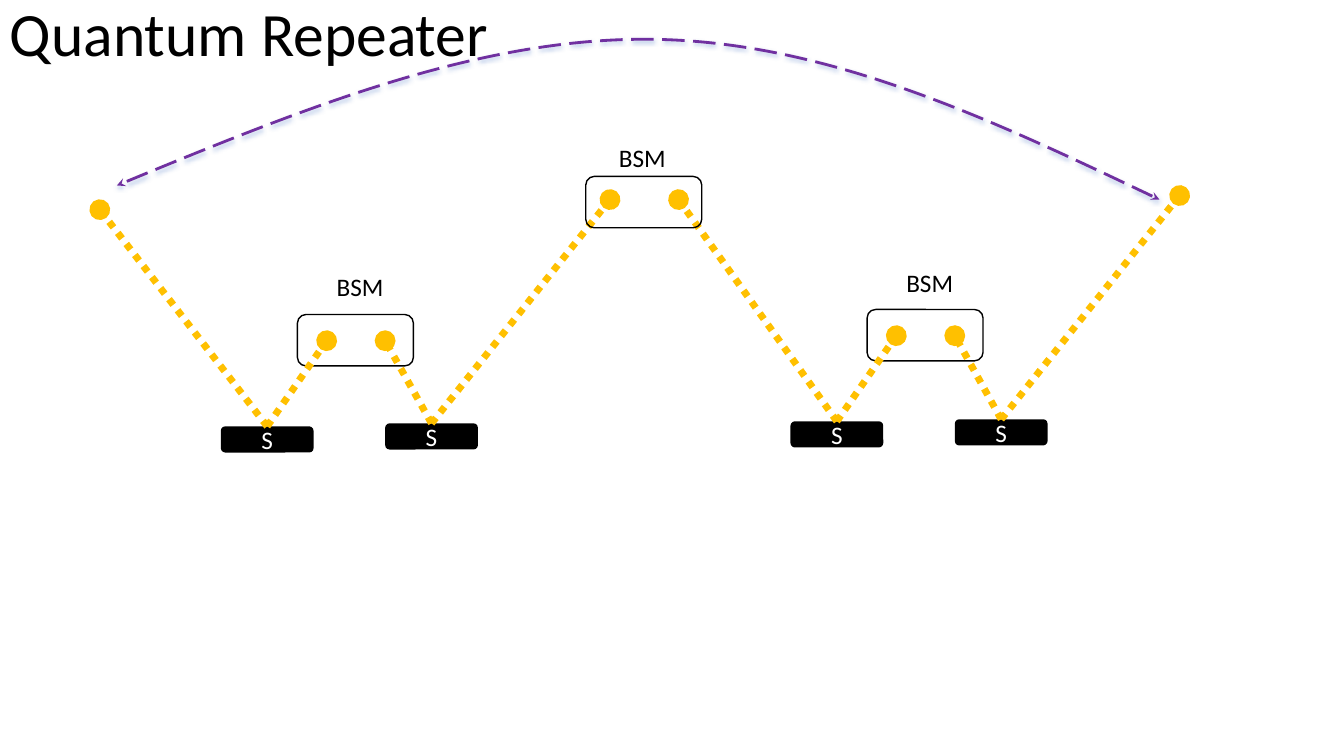
from lxml.etree import SubElement
from pptx import Presentation
from pptx.dml.color import RGBColor
from pptx.enum.dml import MSO_LINE
from pptx.enum.shapes import MSO_CONNECTOR, MSO_SHAPE
from pptx.enum.text import MSO_ANCHOR, PP_ALIGN
from pptx.oxml.ns import qn
from pptx.util import Pt

SCALE = 9144
BLACK, WHITE, GOLD, PURPLE = "000000", "FFFFFF", "FFC000", "7030A0"


def px(*nums):
    """Turn lengths in px into EMU."""
    return [num * SCALE for num in nums]


def paint(color, code):
    """Set a fill, line or font colour from a hex string."""
    color.rgb = RGBColor.from_string(code)


def write(shape, text, size=18, color=BLACK, align=PP_ALIGN.LEFT,
          anchor=MSO_ANCHOR.TOP, space=1.0):
    """Put one formatted paragraph into a shape."""
    frame = shape.text_frame
    frame.word_wrap = True
    frame.vertical_anchor = anchor
    para = frame.paragraphs[0]
    para.alignment = align
    para.line_spacing = space
    run = para.add_run()
    run.text = text
    run.font.name = "Calibri"
    run.font.size = Pt(size)
    paint(run.font.color, color)


def label(slide, text, left, top, width, height, **style):
    """Add a text box."""
    box = slide.shapes.add_textbox(*px(left, top, width, height))
    write(box, text, **style)


def block(slide, left, top, width, height, fill=None):
    """Add a rounded box, either filled or outlined."""
    box = slide.shapes.add_shape(MSO_SHAPE.ROUNDED_RECTANGLE,
                                 *px(left, top, width, height))
    box.shadow.inherit = False
    if fill:
        box.fill.solid()
        paint(box.fill.fore_color, fill)
        box.line.fill.background()
    else:
        box.fill.background()
        paint(box.line.color, BLACK)
        box.line.width = Pt(1)
    return box


def stroke(shape, color, width, dash, **ends):
    """Style a dashed line and its ends."""
    paint(shape.line.color, color)
    shape.line.width = Pt(width)
    shape.line.dash_style = dash
    line = shape.element.spPr.find(qn("a:ln"))
    for end, kind in ends.items():
        SubElement(line, qn(f"a:{end}")).set("type", kind)


def link(slide, box, photon):
    """Join the top of a source to a photon."""
    start = box.left + box.width // 2, box.top
    line = slide.shapes.add_connector(MSO_CONNECTOR.STRAIGHT, *start, *px(*photon))
    line.begin_connect(box, 0)
    stroke(line, GOLD, 5, MSO_LINE.ROUND_DOT, tailEnd="oval")
    SubElement(line.element.spPr, qn("a:effectLst"))


def station(slide, left, top, gap, rise):
    """Add a measurement box with its label above."""
    block(slide, left, top, 115, 51)
    label(slide, "BSM", left + gap, top - rise, 69, 40)


def source(slide, left, top, *photons):
    """Add a photon source with its links."""
    box = block(slide, left, top, 92, 26, BLACK)
    write(box, "S", color=WHITE, align=PP_ALIGN.CENTER, anchor=MSO_ANCHOR.MIDDLE)
    for photon in photons:
        link(slide, box, photon)


def arc(slide, start, *points):
    """Add a two-headed curve through Bezier points."""
    pen = slide.shapes.build_freeform(*start, scale=SCALE)
    pen.add_line_segments(points, close=False)
    curve = pen.convert_to_shape()
    curve.fill.background()
    stroke(curve, PURPLE, 2, MSO_LINE.LONG_DASH, headEnd="stealth", tailEnd="stealth")
    legs = list(curve.element.iter(qn("a:lnTo")))
    route = legs[0].getparent()
    for first in range(0, len(legs), 3):
        bend = SubElement(route, qn("a:cubicBezTo"))
        for leg in legs[first:first + 3]:
            bend.append(leg[0])
            route.remove(leg)
    curve.shadow.inherit = False
    effects = curve.element.spPr.find(qn("a:effectLst"))
    shade = SubElement(effects, qn("a:outerShdw"), blurRad="40000",
                       dist="20000", dir="5400000")
    tint = SubElement(shade, qn("a:srgbClr"), val="4472C4")
    SubElement(tint, qn("a:alpha"), val="40000")


def main():
    """Build the slide."""
    deck = Presentation()
    deck.slide_width, deck.slide_height = px(1333, 750)
    slide = deck.slides.add_slide(deck.slide_layouts[6])
    label(slide, "Quantum Repeater", 0, -36, 1150, 145, size=44,
          anchor=MSO_ANCHOR.MIDDLE, space=0.9)
    station(slide, 295, 312, 29, 48)
    source(slide, 219, 423, (324, 338), (99, 208))
    source(slide, 382, 420, (382, 338), (605, 198))
    arc(slide, (1150, 198), (984, 119), (819, 41), (646, 39),
        (474, 37), (295, 110), (116, 184))
    station(slide, 860, 307, 29, 47)
    source(slide, 784, 418, (889, 333), (673, 198))
    source(slide, 947, 416, (947, 333), (1170, 194))
    station(slide, 581, 175, 23, 39)
    deck.save("out.pptx")


if __name__ == "__main__":
    main()
